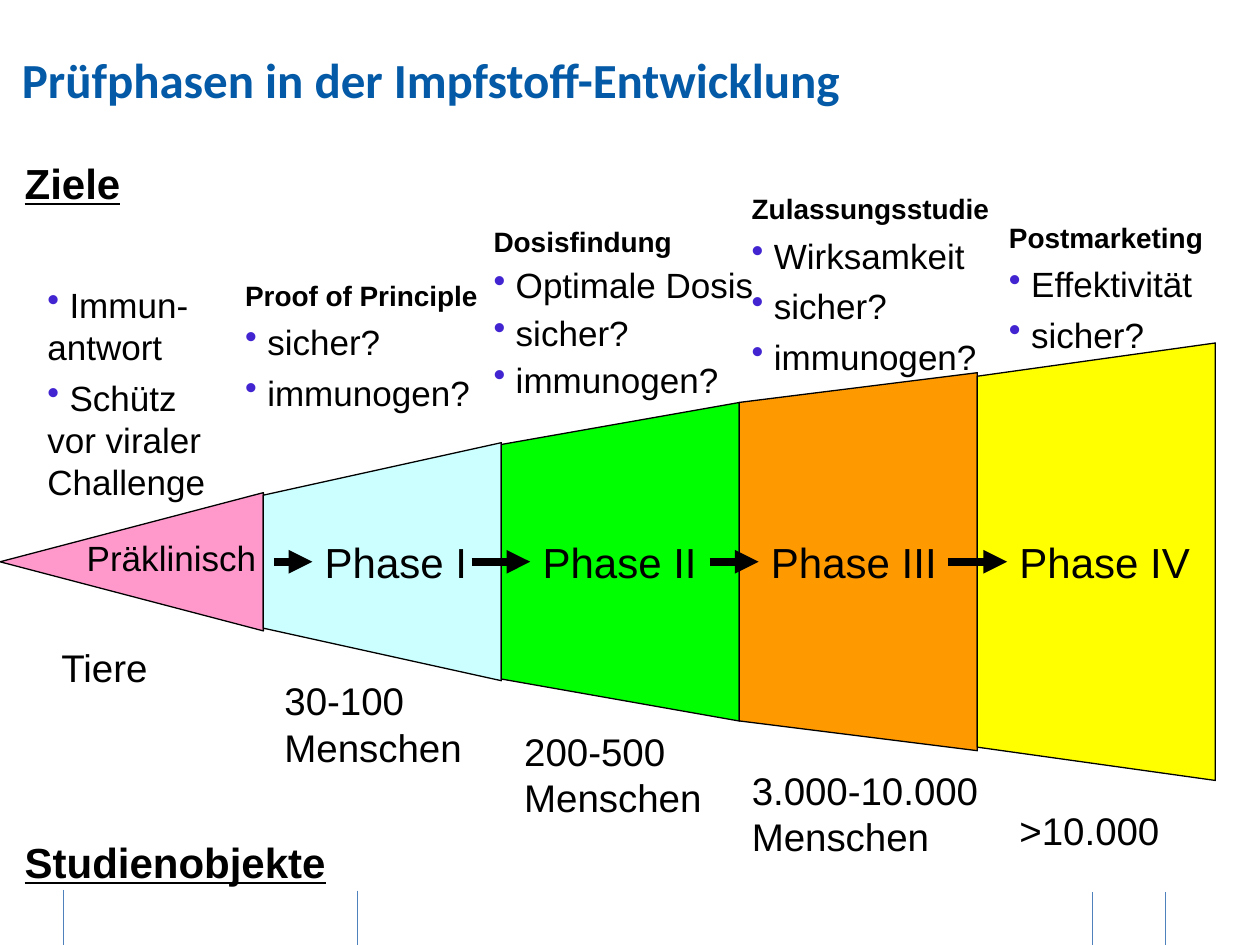
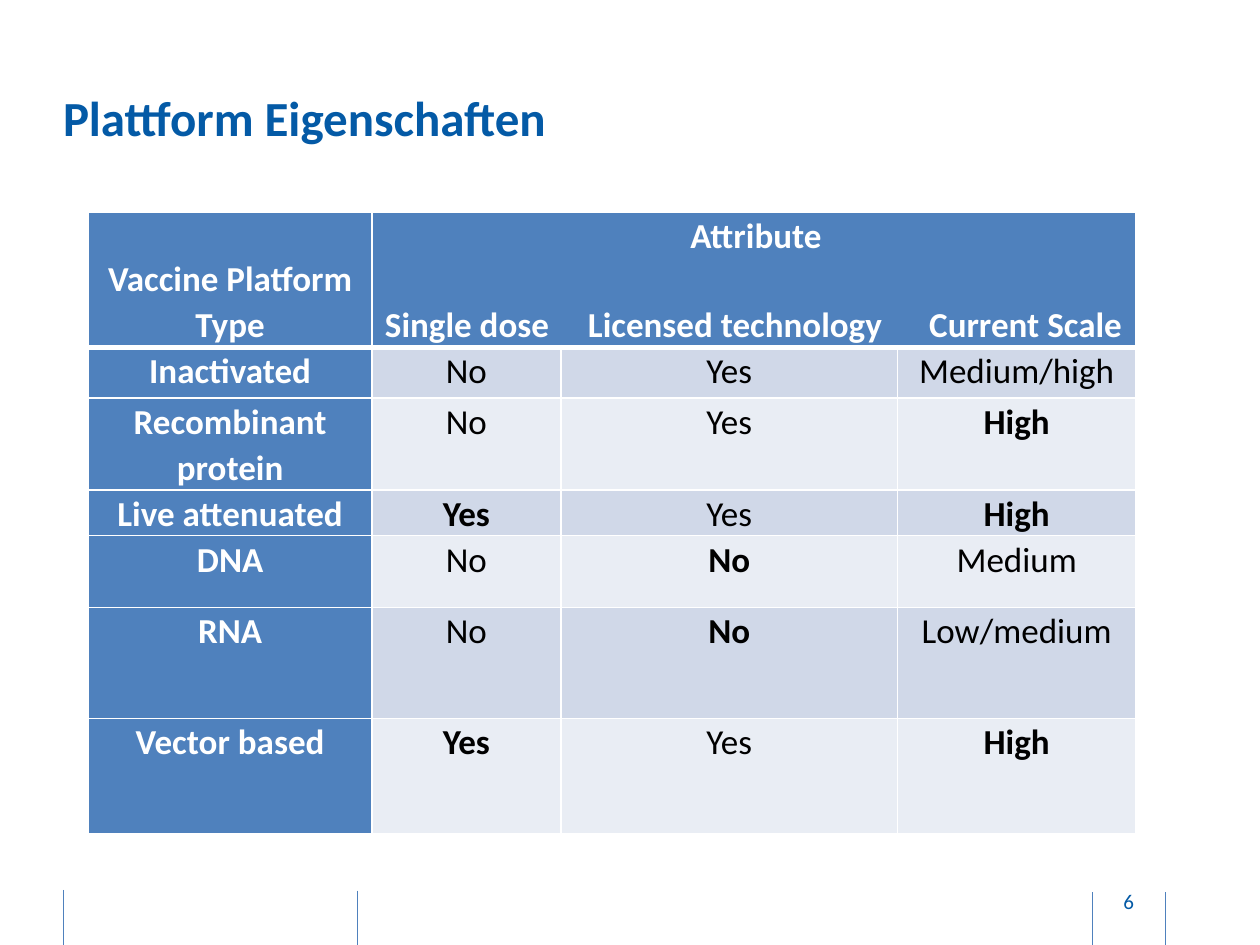
import pptx
import pptx.util
import pptx.dml.color
import pptx.enum.shapes
import pptx.enum.text
import pptx.oxml
import pptx.oxml.ns

Pt = pptx.util.Pt
MSO = pptx.enum.shapes.MSO_SHAPE
ALIGN = pptx.enum.text.PP_ALIGN
ANCHOR = pptx.enum.text.MSO_ANCHOR

NAVY, BLUE, BLACK, WHITE = "045AA6", "4F81BD", "000000", "FFFFFF"
BULLET = "4225D1"
BANDS = ("D0D8E8", "E9EDF4")
RULES = ((36, 508.5), (204.5, 509), (624.5, 510), (666, 510))

STAGES = (
    ("Phase I", "CCFFFF", 38, 68, 178.5, 108),
    ("Phase II", "00FF00", 67, 91, 303, 108),
    ("Phase III", "FF9900", 91, 108, 433.5, 119),
    ("Phase IV", "FFFF00", 106, 125, 575.5, 119),
)
STARTS = (269.5, 405.5, 541.5)
GOALS = (
    (20, 72, 113, 5, None, (" Immun-\vantwort", " Schütz \vvor viraler Challenge")),
    (133, 69, 153, 5, "Proof of Principle", (" sicher?", " immunogen?")),
    (275, 38.5, 164, 3, "Dosisfindung", (" Optimale Dosis", " sicher?", " immunogen?")),
    (422.5, 19.5, 153, 5, "Zulassungsstudie", (" Wirksamkeit", " sicher?", " immunogen?")),
    (569.5, 36, 150, 5, "Postmarketing", (" Effektivität", " sicher?")),
)
COUNTS = (
    (28, 0, 76, "Tiere"),
    (155.5, 19, 136, "30-100 Menschen"),
    (292.5, 48, 136, "200-500 Menschen"),
    (422.5, 70, 148, "3.000-10.000 Menschen"),
    (575.5, 93, 136, ">10.000"),
)
COLS = (162, 108, 192.5, 136)
ROWS = (76, 29, 52.5, 26, 41, 63.5, 66)
HEADS = ("Single dose", "Licensed technology", "Current Scale")
STOPS = (116, 311)
TRAITS = (
    ("Inactivated", "No", "Yes", "Medium/high"),
    ("Recombinant protein", "No", "Yes", "High"),
    ("Live attenuated", "Yes", "Yes", "High"),
    ("DNA", "No", "No", "Medium"),
    ("RNA", "No", "No", "Low/medium"),
    ("Vector based", "Yes", "Yes", "High"),
)
STRONG = (None, "Yes", "No", "High")


def rgb(code):
    return pptx.dml.color.RGBColor.from_string(code)


def node(xml):
    return pptx.oxml.parse_xml(xml.replace(">", f" {pptx.oxml.ns.nsdecls('a')}>", 1)
                               if not xml.endswith("/>") or xml.count("<") > 1
                               else xml.replace("/>", f" {pptx.oxml.ns.nsdecls('a')}/>"))


def style(para, size, color=BLACK, bold=False, font="Arial", line=False):
    for run in para.runs:
        run.font.name = font
        run.font.size = Pt(size)
        run.font.bold = bold
        run.font.underline = line
        run.font.color.rgb = rgb(color)


def label(slide, x, y, w, h, text, size, **look):
    box = slide.shapes.add_textbox(Pt(x), Pt(y), Pt(w), Pt(h))
    box.text_frame.word_wrap = True
    box.text_frame.text = text
    style(box.text_frame.paragraphs[0], size, **look)
    return box


def line(slide, x, y, end, low, color, width):
    link = slide.shapes.add_connector(
        pptx.enum.shapes.MSO_CONNECTOR.STRAIGHT, Pt(x), Pt(y), Pt(end), Pt(low))
    link.line.color.rgb = rgb(color)
    link.line.width = Pt(width)
    link._element.spPr.append(node("<a:effectLst/>"))
    return link


def paint(shape, color):
    shape.shadow.inherit = False
    shape.fill.solid()
    shape.fill.fore_color.rgb = rgb(color)
    shape.line.color.rgb = rgb(BLACK)
    shape.line.width = Pt(0.75)


def frame(deck, text, x, y, w, h):
    slide = deck.slides.add_slide(deck.slide_layouts[5])
    for left, top in RULES:
        line(slide, left, top, left, 540, BLUE, 0.5)
    title = slide.shapes.title
    title.left, title.top, title.width, title.height = Pt(x), Pt(y), Pt(w), Pt(h)
    body = title.text_frame
    body.text = text
    body.word_wrap = True
    body.vertical_anchor = ANCHOR.TOP
    body.margin_left = body.margin_right = body.margin_top = body.margin_bottom = 0
    body.paragraphs[0].alignment = ALIGN.LEFT
    style(body.paragraphs[0], 28, NAVY, True, "Calibri")
    return slide


def arrow(slide, x, mid, goal):
    link = line(slide, x, mid, x + 30, mid, BLACK, 4.5)
    link.end_connect(goal, 1)
    link.line._get_or_add_ln().append(node('<a:tailEnd type="triangle"/>'))
    return link


def funnel(slide, x, mid, tip, step):
    cone = slide.shapes.add_shape(
        MSO.ISOSCELES_TRIANGLE, Pt(x + tip / 2 - 39.5), Pt(mid - tip / 2), Pt(79), Pt(tip))
    cone.rotation = 270
    paint(cone, "FF99CC")
    for i, (name, color, near, far, left, w) in enumerate(STAGES):
        a = x + tip + i * step
        b = a + step
        form = slide.shapes.build_freeform(Pt(a), Pt(mid - near))
        form.add_line_segments([(Pt(b), Pt(mid - far)), (Pt(b), Pt(mid + far)),
                                (Pt(a), Pt(mid + near))])
        paint(form.convert_to_shape(), color)
    first = label(slide, x + 42.5, mid - 18, 114, 36, "Präklinisch", 20)
    boxes = [label(slide, x + left, mid - 18, w, 36, name, 24)
             for name, color, near, far, left, w in STAGES]
    arrow(slide, x + 155, mid, boxes[0]).begin_connect(first, 3)
    for start, box in zip(STARTS, boxes[1:]):
        arrow(slide, x + start, mid, box)


def goals(slide, x, y):
    label(slide, x + 7, y, 176, 36, "Ziele", 24, bold=True, line=True)
    for left, top, w, gap, head, items in GOALS:
        lines = ([head] if head else []) + list(items)
        box = label(slide, x + left, y + top, w, 28 * len(lines) + 8, lines[0], 16, bold=True)
        for i, text in enumerate(lines):
            para = box.text_frame.paragraphs[0]
            if i:
                para = box.text_frame.add_paragraph()
                para.text = text
                para.space_before = Pt(gap)
            if text != head:
                props = para._p.get_or_add_pPr()
                props.append(node(f'<a:buClr><a:srgbClr val="{BULLET}"/></a:buClr>'))
                props.append(node('<a:buChar char="•"/>'))
                style(para, 20)


def counts(slide, x, y):
    for left, top, w, text in COUNTS:
        label(slide, x + left, y + top, w, 60 if " " in text else 34, text, 22)
    label(slide, x + 7, y + 110, 193, 36, "Studienobjekte", 24, bold=True, line=True)


def dress(cell, color, base=1):
    props = cell._tc.get_or_add_tcPr()
    for side, width in zip("LRTB", (1, 1, 1, base)):
        props.append(node(f'<a:ln{side} w="{Pt(width)}"><a:solidFill>'
                          f'<a:srgbClr val="{WHITE}"/></a:solidFill></a:ln{side}>'))
    cell.fill.solid()
    cell.fill.fore_color.rgb = rgb(color)
    cell.margin_left = cell.margin_right = Pt(5)
    cell.margin_top = cell.margin_bottom = 0


def write(para, text, color, bold):
    para.text = text
    para.alignment = ALIGN.CENTER
    para.line_spacing = 1.07
    style(para, 20, color, bold, "Calibri")


def header(grid):
    for i in range(len(COLS)):
        dress(grid.cell(0, i), BLUE, 3)
    kind, group = grid.cell(0, 0), grid.cell(0, 1)
    write(kind.text_frame.paragraphs[0], "Vaccine Platform Type", WHITE, True)
    kind.vertical_anchor = ANCHOR.BOTTOM
    group.merge(grid.cell(0, 3))
    group.margin_left = Pt(7.5)
    write(group.text_frame.paragraphs[0], "Attribute", WHITE, True)
    para = group.text_frame.add_paragraph()
    para.space_before = Pt(24.5)
    write(para, "\t".join(HEADS), WHITE, True)
    para.alignment = ALIGN.LEFT
    tabs = "".join(f'<a:tab pos="{Pt(stop)}" algn="l"/>' for stop in STOPS)
    para._p.get_or_add_pPr().append(node(f"<a:tabLst>{tabs}</a:tabLst>"))


def matrix(slide, x, y):
    grid = slide.shapes.add_table(len(ROWS), len(COLS), Pt(x), Pt(y),
                                  Pt(sum(COLS)), Pt(sum(ROWS))).table
    for col, width in zip(grid.columns, COLS):
        col.width = Pt(width)
    for row, height in zip(grid.rows, ROWS):
        row.height = Pt(height)
    header(grid)
    for r, traits in enumerate(TRAITS, 1):
        for c, text in enumerate(traits):
            cell = grid.cell(r, c)
            dress(cell, BANDS[(r - 1) % 2] if c else BLUE)
            write(cell.text_frame.paragraphs[0], text, BLACK if c else WHITE,
                  c == 0 or text == STRONG[c])


def number(slide, x, y, w, h, text):
    box = label(slide, x, y, w, h, text, 12, color=NAVY, font="Calibri")
    box.text_frame.margin_left = box.text_frame.margin_right = 0
    box.text_frame.vertical_anchor = ANCHOR.MIDDLE
    box.text_frame.paragraphs[0].alignment = ALIGN.CENTER


def main():
    deck = pptx.Presentation()
    deck.slide_width, deck.slide_height = Pt(720), Pt(540)
    phases = frame(deck, "Prüfphasen in der Impfstoff-Entwicklung", 12.5, 28.5, 700, 50)
    funnel(phases, 0, 321, 150.5, 136)
    goals(phases, 0, 86.5)
    counts(phases, 0, 364.5)
    traits = frame(deck, "Plattform Eigenschaften", 36, 50, 628.5, 69)
    matrix(traits, 50.5, 121.5)
    number(traits, 625.5, 500.5, 39, 29, "6")
    deck.save("out.pptx")


if __name__ == "__main__":
    main()
